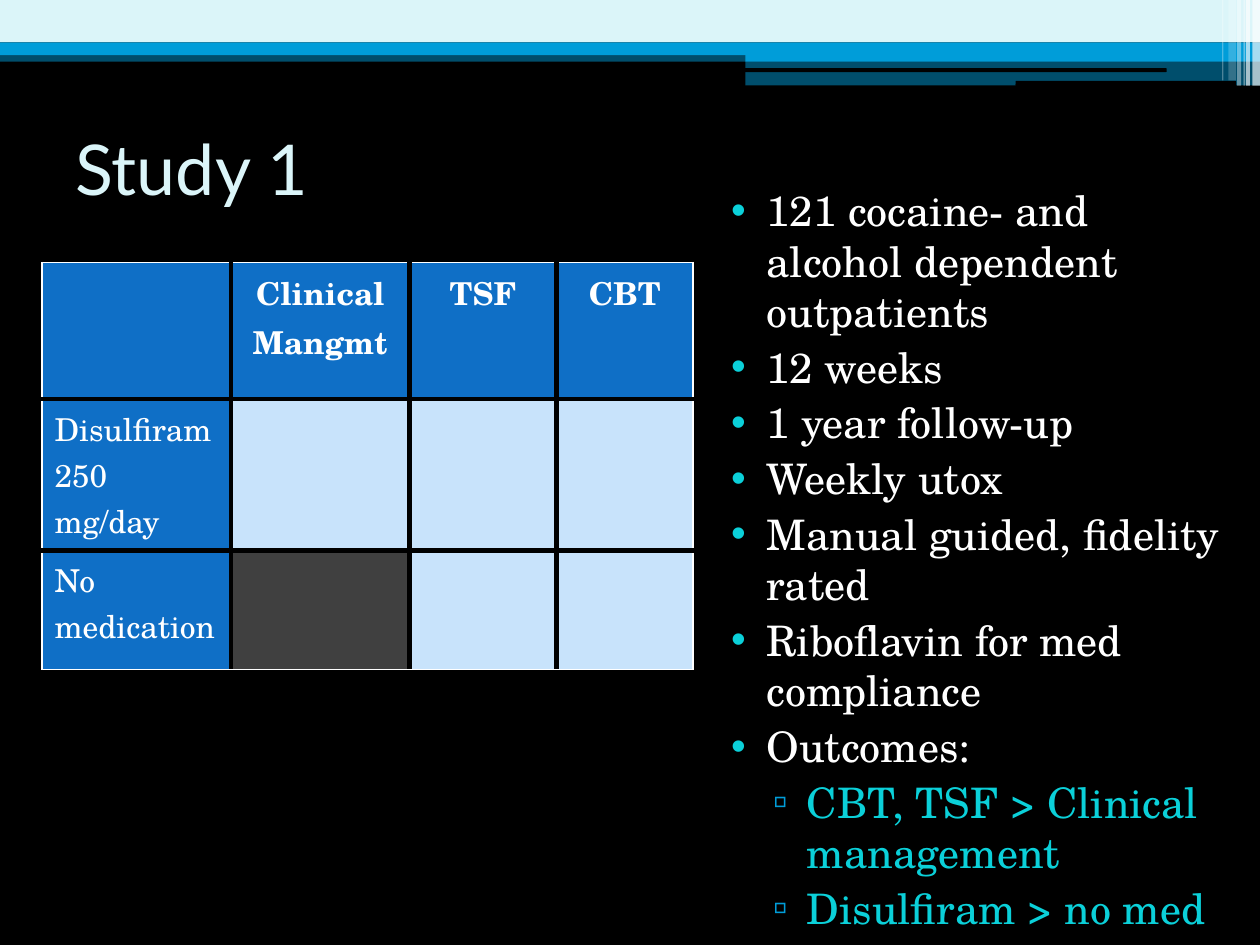
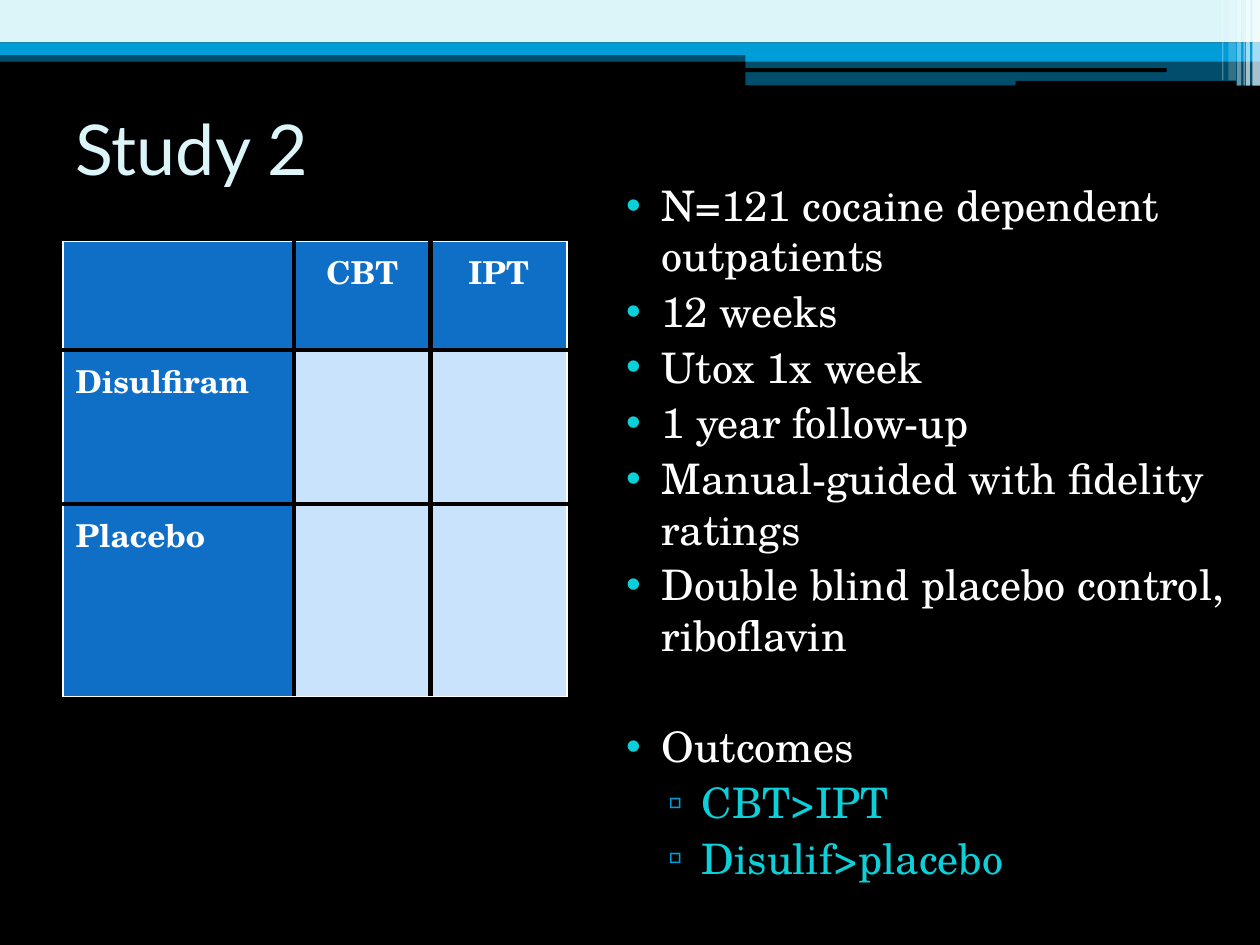
from dataclasses import dataclass

from lxml import etree
from pptx import Presentation
from pptx.dml.color import RGBColor
from pptx.enum.shapes import MSO_SHAPE
from pptx.enum.text import MSO_ANCHOR, MSO_AUTO_SIZE, PP_ALIGN
from pptx.oxml.ns import qn
from pptx.util import Pt

RECTANGLE, ROUNDED = MSO_SHAPE.RECTANGLE, MSO_SHAPE.ROUNDED_RECTANGLE
LEFT, CENTER = PP_ALIGN.LEFT, PP_ALIGN.CENTER
MIDDLE, TOP = MSO_ANCHOR.MIDDLE, MSO_ANCHOR.TOP
NO_AUTOFIT = MSO_AUTO_SIZE.NONE


@dataclass(frozen=True)
class Theme:
    black: str = "000000"
    white: str = "FFFFFF"
    pale: str = "DBF5F9"
    sky: str = "009DD9"
    teal: str = "0BD0D9"
    header: str = "0F6FC6"
    cell: str = "C8E3FB"
    unused: str = "404040"
    title_font: str = "Lato"
    body_font: str = "TeX Gyre Schola"
    title_size: int = 40
    body_size: int = 24
    table_size: int = 18
    line_spacing: float = 1.0
    space_before: int = 3


THEME = Theme()

BANDS = [
    (RECTANGLE, (0, 28.8, 720, 6.5), THEME.sky, 50),
    (RECTANGLE, (0, 0, 720, 24.2), THEME.pale, 100),
    (RECTANGLE, (0, 24.2, 720, 7.3), THEME.sky, 100),
    (RECTANGLE, (426, 28, 294, 7.2), THEME.sky, 100),
    (RECTANGLE, (426, 35.2, 294, 13.6), THEME.sky, 50),
    (ROUNDED, (425.5, 39, 241.2, 2.2), THEME.black, 100),
    (ROUNDED, (580.3, 46.2, 126, 3), THEME.black, 100),
]
STRIPES = [
    (715.7, 4.3, 49, 65), (712, 2.2, 49, 65), (710.6, 0.7, 49, 60),
    (707, 2.2, 49, 40), (702, 4.3, 46, 20), (698.4, 0.7, 46, 30),
]
BULLETS = [
    ("•", THEME.teal, THEME.white, 28.8, -20.2),
    ("▫", THEME.sky, THEME.teal, 51.8, -19.4),
]


def rgb(color):
    return RGBColor.from_string(color)


def place(box, bounds):
    box.left, box.top, box.width, box.height = map(Pt, bounds)


def add_span(para, text, font, size, color, bold=False):
    span = para.add_run()
    span.text = text
    span.font.name = font
    span.font.size = Pt(size)
    span.font.color.rgb = rgb(color)
    span.font.bold = bold


def add_color(parent, color):
    return etree.SubElement(parent, qn("a:srgbClr"), val=color)


def add_band(page, kind, bounds, color, opacity):
    band = page.shapes.add_shape(kind, *map(Pt, bounds))
    band.shadow.inherit = False
    band.fill.solid()
    band.fill.fore_color.rgb = rgb(color)
    band.line.fill.background()
    if opacity < 100:
        tint = band.element.spPr.find(f".//{qn('a:srgbClr')}")
        etree.SubElement(tint, qn("a:alpha"), val=str(opacity * 1000))
    return band


def decorate_layout(layout, page):
    layout.background.fill.solid()
    layout.background.fill.fore_color.rgb = rgb(THEME.black)
    stripes = [(RECTANGLE, (left, 0, width, height), THEME.white, opacity)
               for left, width, height, opacity in STRIPES]
    for index, band_row in enumerate(BANDS + stripes):
        band = add_band(page, *band_row)
        band.element.nvSpPr.cNvPr.set("id", str(100 + index))
        layout.shapes.element.insert(2 + index, band.element)


def set_title(page, text, top):
    title = page.shapes.title
    place(title, (36, top, 648, 84))
    frame = title.text_frame
    frame.auto_size = NO_AUTOFIT
    frame.vertical_anchor = MIDDLE
    para = frame.paragraphs[0]
    para.alignment = LEFT
    add_span(para, text, THEME.title_font, THEME.title_size, THEME.pale)


def set_bullet(para, level):
    symbol, bullet_color, _, margin, indent = BULLETS[level]
    properties = para._p.get_or_add_pPr()
    properties.set("marL", str(Pt(margin)))
    properties.set("indent", str(Pt(indent)))
    add_color(etree.SubElement(properties, qn("a:buClr")), bullet_color)
    etree.SubElement(properties, qn("a:buChar"), char=symbol)


def set_list(page, bounds, items, outcomes_gap):
    body = page.placeholders[1]
    place(body, bounds)
    frame = body.text_frame
    frame.auto_size = NO_AUTOFIT
    frame.vertical_anchor = TOP
    frame.word_wrap = True
    for index, (level, text) in enumerate(items):
        para = frame.add_paragraph() if index else frame.paragraphs[0]
        para.level = level
        para.line_spacing = THEME.line_spacing
        gap = outcomes_gap if text.startswith("Outcomes") else THEME.space_before
        para.space_before = Pt(gap)
        set_bullet(para, level)
        add_span(para, text, THEME.body_font, THEME.body_size, BULLETS[level][2])


def set_border(cell, side, outer):
    color, width = (THEME.white, 1) if outer else (THEME.black, 3)
    line = etree.SubElement(cell._tc.get_or_add_tcPr(), qn(f"a:ln{side}"), w=str(Pt(width)))
    add_color(etree.SubElement(line, qn("a:solidFill")), color)


def fill_cell(cell, text, color, alignment, bold):
    for index, line in enumerate(text.split("\n")):
        frame = cell.text_frame
        para = frame.add_paragraph() if index else frame.paragraphs[0]
        para.alignment = alignment
        if line:
            add_span(para, line, THEME.body_font, THEME.table_size, THEME.white, bold)
    cell.fill.solid()
    cell.fill.fore_color.rgb = rgb(color)


def add_design_table(page, origin, widths, heights, headings, arms, bold_arms, unused=()):
    bounds = (*origin, sum(widths), sum(heights))
    table = page.shapes.add_table(len(heights), len(widths), *map(Pt, bounds)).table
    for column, width in zip(table.columns, widths):
        column.width = Pt(width)
    for row, height in zip(table.rows, heights):
        row.height = Pt(height)
    last_row, last_column = len(heights) - 1, len(widths) - 1
    for r in range(len(heights)):
        for c in range(len(widths)):
            cell = table.cell(r, c)
            edges = {"L": c == 0, "R": c == last_column, "T": r == 0, "B": r == last_row}
            for side, outer in edges.items():
                set_border(cell, side, outer)
            if r == 0:
                text = headings[c - 1] if c else ""
                fill_cell(cell, text, THEME.header, CENTER, True)
            elif c == 0:
                fill_cell(cell, arms[r - 1], THEME.header, LEFT, bold_arms)
            else:
                color = THEME.unused if (r, c) in unused else THEME.cell
                fill_cell(cell, "", color, LEFT, False)


def build_study_1(page):
    set_title(page, "Study 1", 54)
    add_design_table(
        page, (24, 150), (108, 102, 84, 78), (78, 79, 68),
        ("Clinical Mangmt", "TSF", "CBT"),
        ("Disulfiram\n250 mg/day", "No medication"), False, {(2, 1)})
    set_list(page, (402, 102, 306, 405), [
        (0, "121 cocaine- and alcohol dependent outpatients"),
        (0, "12 weeks"),
        (0, "1 year follow-up"),
        (0, "Weekly utox"),
        (0, "Manual guided, fidelity rated"),
        (0, "Riboflavin for med compliance"),
        (0, "Outcomes:"),
        (1, "CBT, TSF > Clinical management"),
        (1, "Disulfiram > no med"),
    ], THEME.space_before)


def build_study_2(page):
    set_title(page, "Study 2", 42)
    add_design_table(
        page, (36, 138), (132, 78, 78), (62, 88, 110),
        ("CBT", "IPT"), ("Disulfiram", "Placebo"), True)
    set_list(page, (342, 99, 366, 441), [
        (0, "N=121 cocaine dependent outpatients"),
        (0, "12 weeks"),
        (0, "Utox 1x week"),
        (0, "1 year follow-up"),
        (0, "Manual-guided with fidelity ratings"),
        (0, "Double blind placebo control, riboflavin"),
        (0, "Outcomes"),
        (1, "CBT>IPT"),
        (1, "Disulif>placebo"),
    ], 35)


def main():
    deck = Presentation()
    deck.slide_width, deck.slide_height = Pt(720), Pt(540)
    layout = deck.slide_layouts[1]
    pages = [deck.slides.add_slide(layout) for _ in range(2)]
    decorate_layout(layout, pages[0])
    for page, build in zip(pages, (build_study_1, build_study_2)):
        build(page)
    deck.save("out.pptx")


if __name__ == "__main__":
    main()
